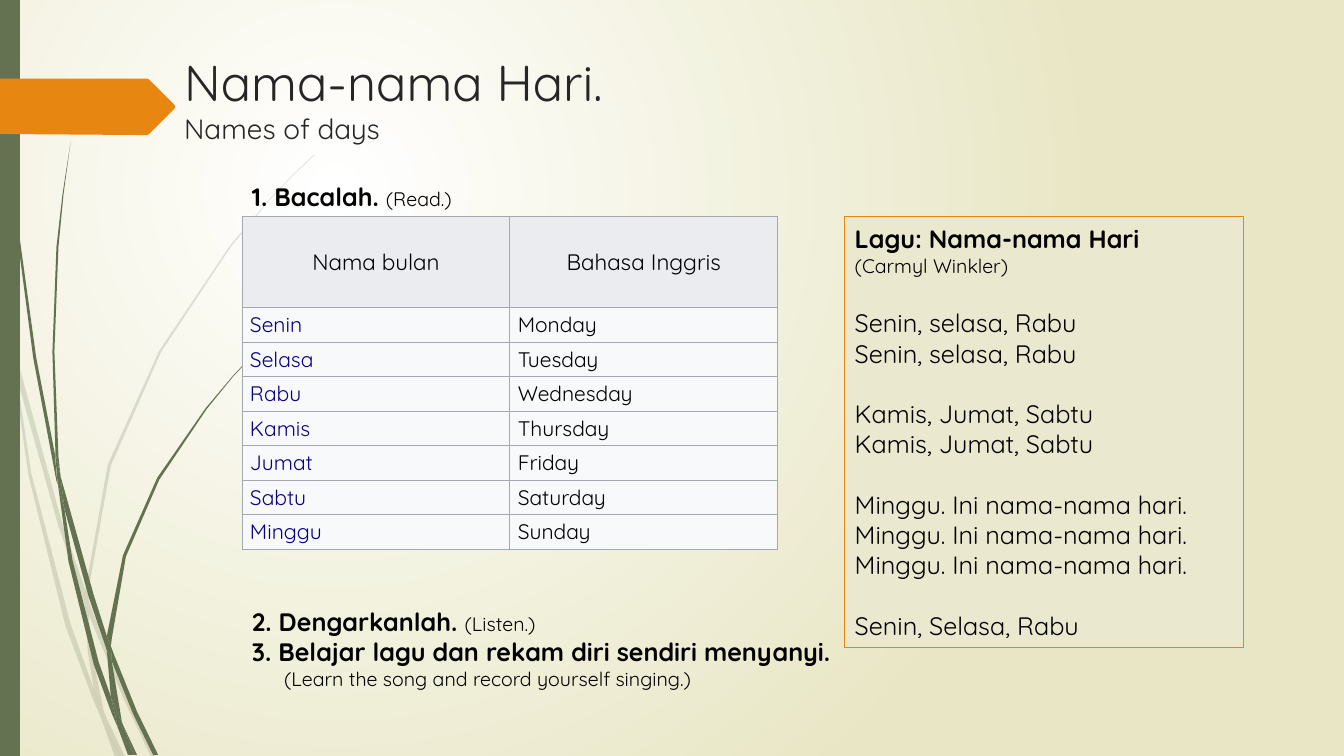
from lxml.etree import SubElement
from pptx import Presentation
from pptx.dml.color import RGBColor
from pptx.enum.shapes import MSO_SHAPE
from pptx.enum.text import MSO_ANCHOR, PP_ALIGN
from pptx.oxml.ns import qn
from pptx.util import Cm, Pt

FONT = "Quicksand"
HEX = {
    "white": "FFFFFF", "sand": "E8E6C4", "green": "647252", "orange": "E78712",
    "panel": "EAE8CF", "title": "262626", "black": "000000", "blue": "0B0080",
    "head": "EAECF0", "cell": "F8F9FA", "rule": "A2A9B1",
}

# Text: each line is a list of (text, size, bold) runs
TITLE = [("Nama-nama Hari.", 36), ("Names of days", 20)]
HEADS = ("Nama bulan", "Bahasa Inggris")
DAYS = [
    ("Senin", "Monday"), ("Selasa", "Tuesday"), ("Rabu", "Wednesday"),
    ("Kamis", "Thursday"), ("Jumat", "Friday"), ("Sabtu", "Saturday"),
    ("Minggu", "Sunday"),
]
READ = [[("1. Bacalah. ", 18, True), ("(Read.)", 14, False)]]
TASKS = [
    [("2. Dengarkanlah. ", 18, True), ("(Listen.)", 14, False)],
    [("3. Belajar lagu dan rekam diri sendiri menyanyi.", 18, True)],
    [("(Learn the song and record yourself singing.)", 14, False)],
]
SONG = [
    [("Lagu: Nama-nama Hari", 18, True)],
    [("(Carmyl Winkler)", 14, False)],
]
VERSES = [
    ["Senin, selasa, Rabu"] * 2,
    ["Kamis, Jumat, Sabtu"] * 2,
    ["Minggu. Ini nama-nama hari."] * 3,
    ["Senin, Selasa, Rabu"],
]

# Outlines, in steps of 0.0254 cm
STEP = Cm(0.0254)
PALE = [
    [(11, 350), (9, 322), (0, 282), (0, 299), (10, 344)],
    [(58, 522), (84, 599), (85, 586), (62, 520), (14, 345), (17, 376)],
    [(92, 607), (88, 596), (88, 610), (123, 694), (150, 751), (155, 751), (127, 692)],
    [(119, 751), (124, 751), (105, 711)],
    [(93, 683), (70, 619), (31, 469), (17, 376), (11, 350), (28, 470), (65, 621),
     (92, 693), (101, 714), (99, 707)],
    [(84, 599), (87, 646), (93, 683), (96, 692), (105, 711), (103, 706), (91, 646),
     (88, 610), (88, 608)],
    [(88, 584), (110, 462), (160, 349), (229, 245), (268, 198), (290, 175), (312, 154),
     (312, 153), (289, 175), (268, 197), (228, 244), (158, 348), (107, 461), (85, 584),
     (85, 586), (88, 596)],
    [(101, 714), (114, 751), (119, 751)],
    [(88, 608), (88, 610), (88, 596), (85, 586), (84, 599)],
    [(96, 692), (93, 683), (99, 707), (101, 714), (119, 751), (105, 711)],
]
DARK = [
    [(7, 110), (17, 233), (33, 355), (56, 477), (57, 481), (55, 457), (55, 453),
     (36, 355), (19, 232), (8, 109), (5, 48), (4, 0), (3, 0), (4, 48)],
    [(88, 592), (106, 645), (106, 633), (106, 631), (93, 590), (60, 472), (64, 505)],
    [(113, 649), (110, 641), (111, 656), (132, 708), (152, 749), (157, 749), (136, 706)],
    [(110, 691), (98, 657), (72, 556), (64, 505), (57, 477), (68, 557), (93, 659),
     (111, 708), (117, 722), (116, 717)],
    [(60, 472), (58, 453), (54, 349), (58, 245), (63, 193), (70, 141), (62, 193),
     (56, 245), (52, 349), (55, 449)],
    [(133, 749), (136, 749), (122, 719)],
    [(57, 477), (64, 505), (60, 472), (55, 449), (55, 453)],
    [(111, 633), (125, 552), (158, 476), (205, 406), (231, 374), (245, 359), (261, 344),
     (260, 344), (245, 358), (231, 373), (204, 405), (156, 474), (122, 551), (106, 631),
     (110, 641)],
    [(117, 722), (127, 749), (131, 749)],
    [(106, 645), (110, 691), (116, 706), (122, 719), (121, 716), (111, 656), (109, 651)],
    [(106, 645), (109, 651), (111, 656), (110, 641), (106, 631), (106, 633)],
    [(116, 706), (110, 691), (116, 717), (117, 722), (130, 749), (133, 749), (122, 719)],
]
ARROW = [(173, 108), (148, 133), (146, 134), (136, 134), (0, 133), (0, 78), (136, 78),
         (146, 78), (148, 79), (173, 104), (174, 106)]


def rgb(name):
    return RGBColor.from_string(HEX[name])


def paint(shape, name):
    shape.shadow.inherit = False
    shape.fill.solid()
    shape.fill.fore_color.rgb = rgb(name)
    shape.line.fill.background()


def trace(dots, name, alpha=None):
    pen = slide.shapes.build_freeform(*dots[0], scale=STEP)
    pen.add_line_segments(dots[1:], close=True)
    shape = pen.convert_to_shape()
    paint(shape, name)
    if alpha:
        tone = next(shape.fill._xPr.iter(qn("a:srgbClr")))
        SubElement(tone, qn("a:alpha"), val=str(alpha * 1000))


def write(para, text, size, bold=False, name="black"):
    run = para.add_run()
    run.text = text
    font = run.font
    font.name, font.size, font.bold = FONT, Pt(size), bold
    font.color.rgb = rgb(name)


def fill_text(frame, lines):
    frame.word_wrap = True
    for i, line in enumerate(lines):
        para = frame.paragraphs[0] if i == 0 else frame.add_paragraph()
        para.alignment = PP_ALIGN.LEFT
        for run in line:
            write(para, *run)


def add_text(box, lines):
    frame = slide.shapes.add_textbox(*map(Cm, box)).text_frame
    fill_text(frame, lines)
    return frame


def edge(cell):
    props = cell._tc.get_or_add_tcPr()
    for i, side in enumerate(("lnL", "lnR", "lnT", "lnB")):
        line = props.makeelement(qn("a:" + side), {"w": str(Pt(0.75))})
        tone = SubElement(line, qn("a:solidFill"))
        SubElement(tone, qn("a:srgbClr"), val=HEX["rule"])
        props.insert(i, line)


deck = Presentation()
deck.slide_width, deck.slide_height = Cm(33.87), Cm(19.05)
slide = deck.slides.add_slide(deck.slide_layouts[6])

# Background glow
back = slide.background.fill
back.gradient()
for stop, name in zip(back.gradient_stops, ("white", "sand")):
    stop.color.rgb = rgb(name)
grad = next(slide.background._cSld.iter(qn("a:gradFill")))
lin = grad.find(qn("a:lin"))
glow = grad.makeelement(qn("a:path"), {"path": "circle"})
SubElement(glow, qn("a:fillToRect"), l="50000", t="50000", r="100000", b="100000")
grad.replace(lin, glow)

# Grass, side bar and arrow
for blade in PALE:
    trace(blade, "green", 20)
for blade in DARK:
    trace(blade, "green")
bar = slide.shapes.add_shape(MSO_SHAPE.RECTANGLE, 0, 0, Cm(0.5), deck.slide_height)
paint(bar, "green")
trace(ARROW, "orange")

# Title
para = add_text((4.39, 1.17, 24.77, 2.87), [[]]).paragraphs[0]
for i, (text, size) in enumerate(TITLE):
    if i:
        para.add_line_break()
    write(para, text, size, name="title")

# Table of days
rows = [HEADS] + DAYS
grid = slide.shapes.add_table(len(rows), 2, Cm(6.1), Cm(5.46), Cm(13.5), Cm(8.38)).table
for col in grid.columns:
    col.width = Cm(6.75)
for r, row in enumerate(rows):
    grid.rows[r].height = Cm(0.87 if r else 2.29)
    for c, text in enumerate(row):
        cell = grid.cell(r, c)
        cell.margin_left = cell.margin_right = Cm(0.2)
        cell.margin_top = cell.margin_bottom = Cm(0.1)
        cell.vertical_anchor = MSO_ANCHOR.MIDDLE
        cell.fill.solid()
        cell.fill.fore_color.rgb = rgb("cell" if r else "head")
        edge(cell)
        para = cell.text_frame.paragraphs[0]
        para.alignment = PP_ALIGN.LEFT if r else PP_ALIGN.CENTER
        write(para, text, 15 if r else 16, name="blue" if r and c == 0 else "black")

# Reading task
add_text((6.1, 4.45, 13.49, 1.02), READ)

# Song panel, with a gap before each verse
song = slide.shapes.add_shape(MSO_SHAPE.RECTANGLE, *map(Cm, (21.29, 5.46, 10.06, 10.85)))
paint(song, "panel")
song.line.color.rgb = rgb("orange")
song.line.width = Pt(0.75)
frame = song.text_frame
frame.vertical_anchor = MSO_ANCHOR.MIDDLE
fill_text(frame, SONG + [[(text, 18, False)] for verse in VERSES for text in verse])
first = len(SONG)
for verse in VERSES:
    frame.paragraphs[first].space_before = Pt(21.6)
    first += len(verse)

# Listening and singing tasks
tasks = add_text((6.1, 15.16, 15.9, 2.39), TASKS)
tasks.paragraphs[-1]._p.get_or_add_pPr().set("marL", str(Cm(0.81)))

deck.save("out.pptx")
